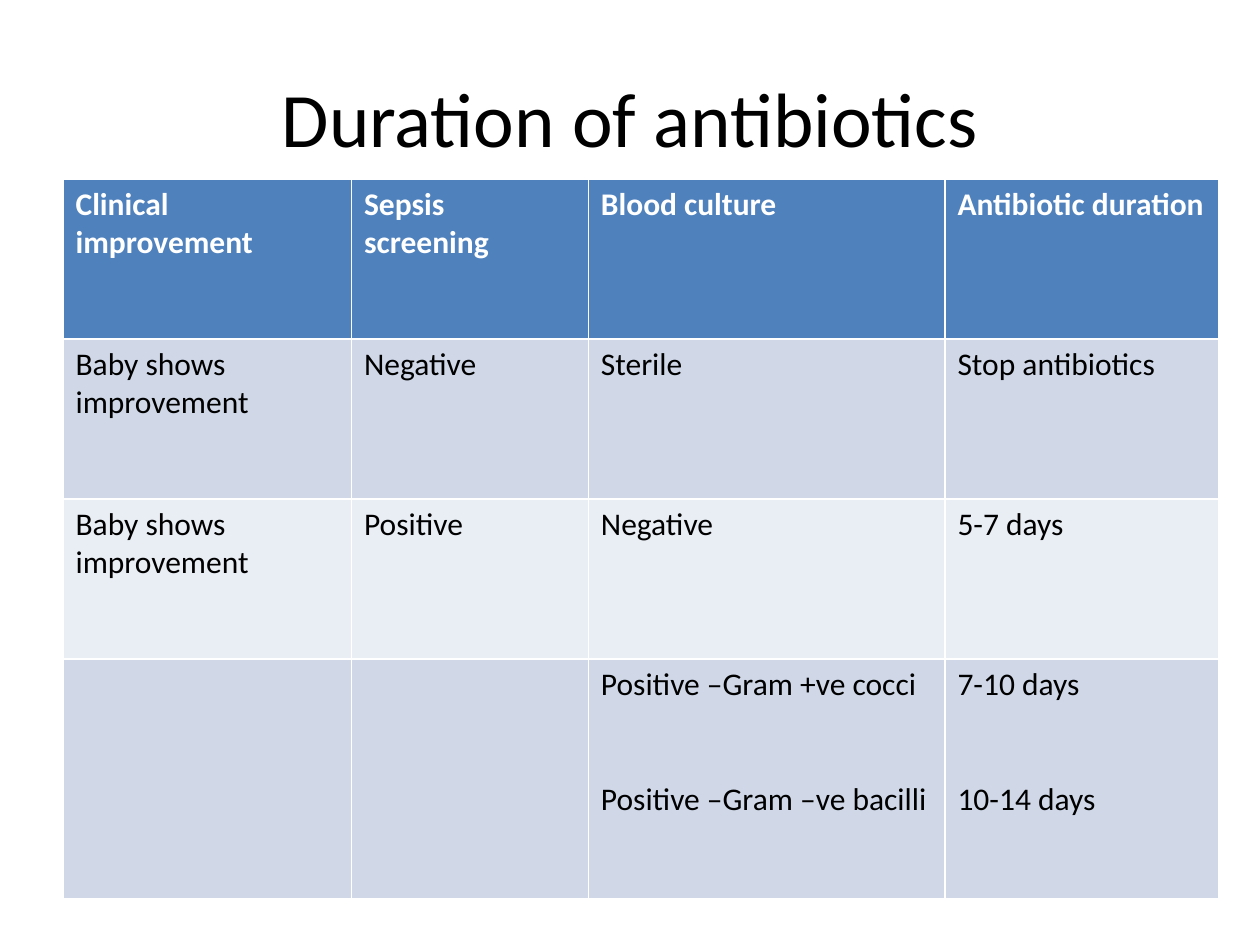
from pptx import Presentation
from pptx.dml.color import RGBColor
from pptx.enum.text import MSO_ANCHOR, PP_ALIGN
from pptx.util import Inches, Pt

MIDDLE = MSO_ANCHOR.MIDDLE
CENTER = PP_ALIGN.CENTER

BLACK = RGBColor(0x00, 0x00, 0x00)
WHITE = RGBColor(0xFF, 0xFF, 0xFF)
BLUE = RGBColor(0x4F, 0x81, 0xBD)
BANDS = [RGBColor(0xE9, 0xED, 0xF4), RGBColor(0xD0, 0xD8, 0xE8)]

TITLE = {"name": "Calibri", "size": Pt(44), "bold": False}
HEAD = {"name": "Calibri", "size": Pt(18), "bold": True}
BODY = {"name": "Calibri", "size": Pt(18), "bold": False}

COLS = [2.29, 1.88, 2.83, 2.17]
ROWS = [1.27, 1.27, 1.27, 1.9]
GAP = Pt(44)
CELLS = [
    ["Clinical improvement", "Sepsis screening", "Blood culture", "Antibiotic duration"],
    ["Baby shows improvement", "Negative", "Sterile", "Stop antibiotics"],
    ["Baby shows improvement", "Positive", "Negative", "5-7 days"],
    ["", "", "Positive –Gram +ve cocci\nPositive –Gram –ve bacilli", "7-10 days\n10-14 days"],
]


def style(font, look, color):
    for key, value in look.items():
        setattr(font, key, value)
    font.color.rgb = color


def add_title(slide, text, left, top, width, height):
    title = slide.shapes.title
    box = {"left": left, "top": top, "width": width, "height": height}
    for key, value in box.items():
        setattr(title, key, Inches(value))
    frame = title.text_frame
    frame.text = text
    frame.vertical_anchor = MIDDLE
    para = frame.paragraphs[0]
    para.alignment = CENTER
    style(para.runs[0].font, TITLE, BLACK)


def fill_cell(cell, text, look, color, fill):
    cell.fill.solid()
    cell.fill.fore_color.rgb = fill
    cell.text = text
    for i, para in enumerate(cell.text_frame.paragraphs):
        style(para.font, look, color)
        if i:
            para.space_before = GAP
        for run in para.runs:
            style(run.font, look, color)


def add_grid(slide, left, top, width, height):
    box = [Inches(n) for n in (left, top, width, height)]
    table = slide.shapes.add_table(len(ROWS), len(COLS), *box).table
    for col, size in zip(table.columns, COLS):
        col.width = Inches(size * width / sum(COLS))
    for row, size in zip(table.rows, ROWS):
        row.height = Inches(size * height / sum(ROWS))
    for r, texts in enumerate(CELLS):
        look, color, fill = (BODY, BLACK, BANDS[r % 2]) if r else (HEAD, WHITE, BLUE)
        for c, text in enumerate(texts):
            fill_cell(table.cell(r, c), text, look, color, fill)


def main():
    deck = Presentation()
    deck.slide_width = Inches(10)
    deck.slide_height = Inches(7.5)
    slide = deck.slides.add_slide(deck.slide_layouts[5])
    add_title(slide, "Duration of antibiotics", 0.5, 0.3, 9, 1.25)
    add_grid(slide, 0.5, 1.42, 9.17, 5.71)
    deck.save("out.pptx")


if __name__ == "__main__":
    main()
